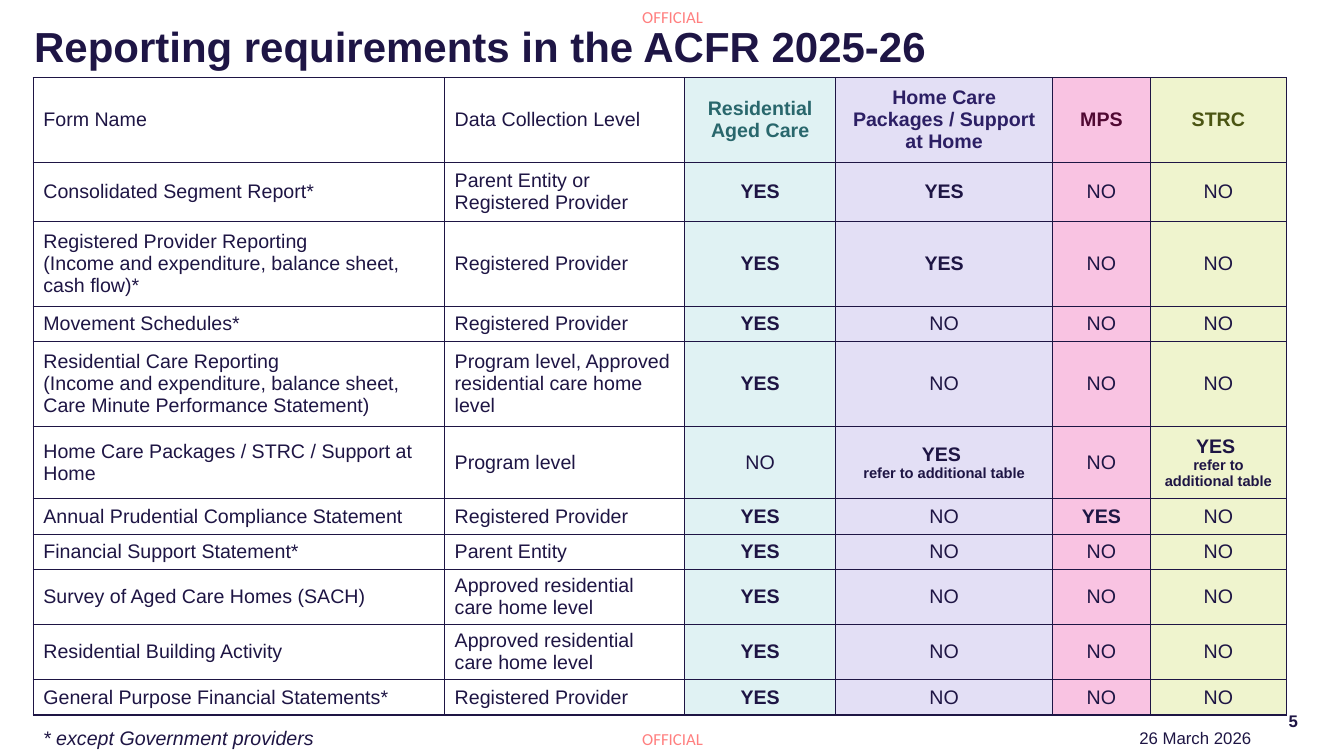
"""Build the slide of reporting requirements in the ACFR 2025-26."""
from lxml.etree import SubElement
from pptx import Presentation
from pptx.dml.color import RGBColor
from pptx.enum.text import MSO_ANCHOR as ANCHOR, PP_ALIGN as ALIGN
from pptx.oxml.ns import qn
from pptx.util import Inches, Pt

COLORS = {
    "ink": "1E1544", "title": "1E1545", "marking": "FF0000",
    "teal": "29676C", "violet": "2C1F64", "plum": "510933", "olive": "4B5513",
    "pale teal": "E0F2F3", "pale violet": "E3DFF5",
    "pale pink": "F9C3E2", "pale olive": "EFF4CE",
}
TITLE = "Reporting requirements in the ACFR 2025-26"
MARKING = "OFFICIAL"
FOOTNOTE = "* except Government providers"
DATE = "26 March 2026"
PAGE = "5"

COLUMNS = [
    ("Form Name", 4.08, "ink", None),
    ("Data Collection Level", 2.38, "ink", None),
    ("Residential Aged Care", 1.5, "teal", "pale teal"),
    ("Home Care Packages / Support at Home", 2.15, "violet", "pale violet"),
    ("MPS", 0.97, "plum", "pale pink"),
    ("STRC", 1.35, "olive", "pale olive"),
]
REFER = "YES \nrefer to additional table"
FORMS = [
    (0.59, "Consolidated Segment Report*",
     "Parent Entity or Registered Provider", "YES", "YES", "NO", "NO"),
    (0.84, "Registered Provider Reporting\n"
     "(Income and expenditure, balance sheet, cash flow)*",
     "Registered Provider", "YES", "YES", "NO", "NO"),
    (0.35, "Movement Schedules*", "Registered Provider", "YES", "NO", "NO", "NO"),
    (0.84, "Residential Care Reporting\n"
     "(Income and expenditure, balance sheet, Care Minute Performance Statement)",
     "Program level, Approved residential care home level", "YES", "NO", "NO", "NO"),
    (0.72, "Home Care Packages / STRC / Support at Home",
     "Program level", "NO", REFER, "NO", REFER),
    (0.35, "Annual Prudential Compliance Statement",
     "Registered Provider", "YES", "NO", "YES", "NO"),
    (0.35, "Financial Support Statement*", "Parent Entity", "YES", "NO", "NO", "NO"),
    (0.54, "Survey of Aged Care Homes (SACH)",
     "Approved residential care home level", "YES", "NO", "NO", "NO"),
    (0.54, "Residential Building Activity",
     "Approved residential care home level", "YES", "NO", "NO", "NO"),
    (0.35, "General Purpose Financial Statements*",
     "Registered Provider", "YES", "NO", "NO", "NO"),
]
HEADER_HEIGHT = 0.84
TABLE_LEFT, TABLE_TOP = 0.33, 0.77


def write(tf, text, size=14, note_size=None, font="Arial", color="ink", bold=False,
          italic=False, align=ALIGN.LEFT, spacing=None, alpha=None):
    """Write each line of text as a paragraph, later lines at note_size."""
    for i, line in enumerate(text.split("\n")):
        p = tf.paragraphs[0] if i == 0 else tf.add_paragraph()
        p.alignment = align
        if spacing:
            p.line_spacing = spacing
        r = p.add_run()
        r.text = line
        r.font.name = font
        r.font.size = Pt(note_size if i and note_size else size)
        r.font.bold, r.font.italic = bold, italic
        r.font.color.rgb = RGBColor.from_string(COLORS[color])
        if alpha:
            rgb = r.font.fill._xPr.find(qn("a:solidFill"))[0]
            SubElement(rgb, qn("a:alpha"), val=str(alpha * 1000))


def add_text(s, text, left, top, width, height, anchor=ANCHOR.TOP,
             inset=True, wrap=True, **fmt):
    """Add a text box."""
    tf = s.shapes.add_textbox(*map(Inches, (left, top, width, height))).text_frame
    tf.word_wrap = wrap
    tf.vertical_anchor = anchor
    if not inset:
        tf.margin_left = tf.margin_right = tf.margin_top = tf.margin_bottom = 0
    write(tf, text, **fmt)


def add_borders(cell):
    """Give a cell a thin line on every side."""
    tcPr = cell._tc.get_or_add_tcPr()
    for i, side in enumerate(("lnL", "lnR", "lnT", "lnB")):
        ln = tcPr.makeelement(qn(f"a:{side}"), {"w": str(Pt(1))})
        SubElement(SubElement(ln, qn("a:solidFill")), qn("a:srgbClr"), val=COLORS["ink"])
        tcPr.insert(i, ln)


def add_forms_table(s):
    """Add the table of forms by program."""
    headers, widths, inks, fills = zip(*COLUMNS)
    rows = [(HEADER_HEIGHT, *headers), *FORMS]
    size = sum(widths), sum(row[0] for row in rows)
    table = s.shapes.add_table(len(rows), len(COLUMNS), *map(
        Inches, (TABLE_LEFT, TABLE_TOP, *size))).table
    table.first_row = table.horz_banding = False
    for column, width in zip(table.columns, widths):
        column.width = Inches(width)
    for i, (height, *texts) in enumerate(rows):
        table.rows[i].height = Inches(height)
        for j, text in enumerate(texts):
            cell = table.cell(i, j)
            cell.vertical_anchor = ANCHOR.MIDDLE
            cell.margin_top = cell.margin_bottom = Inches(0.04)
            if fills[j]:
                cell.fill.solid()
                cell.fill.fore_color.rgb = RGBColor.from_string(COLORS[fills[j]])
            else:
                cell.fill.background()
            add_borders(cell)
            program = fills[j] is not None
            write(cell.text_frame, text,
                  color=inks[j] if i == 0 else "ink",
                  bold=program and (i == 0 or text.startswith("YES")),
                  note_size=10.5 if program else None,
                  align=ALIGN.CENTER if program else ALIGN.LEFT)


def main():
    """Build and save the slide."""
    prs = Presentation()
    prs.slide_width, prs.slide_height = Inches(13.33), Inches(7.5)
    s = prs.slides.add_slide(prs.slide_layouts[6])
    for top in (0.07, 7.23):
        add_text(s, MARKING, 6.37, top, 0.64, 0.2, inset=False, wrap=False,
                 size=12, font="Calibri", color="marking", alpha=50)
    add_text(s, PAGE, 12.52, 6.95, 0.45, 0.4, anchor=ANCHOR.MIDDLE,
             size=12, color="title", bold=True, align=ALIGN.RIGHT)
    add_text(s, TITLE, 0.24, 0.19, 10.99, 0.6, anchor=ANCHOR.MIDDLE,
             size=30, color="title", bold=True, spacing=0.9)
    add_text(s, DATE, 9.51, 7.17, 3, 0.3, size=12, align=ALIGN.RIGHT)
    add_forms_table(s)
    add_text(s, FOOTNOTE, TABLE_LEFT, 7.15, 6.67, 0.34, italic=True)
    prs.save("out.pptx")


if __name__ == "__main__":
    main()
